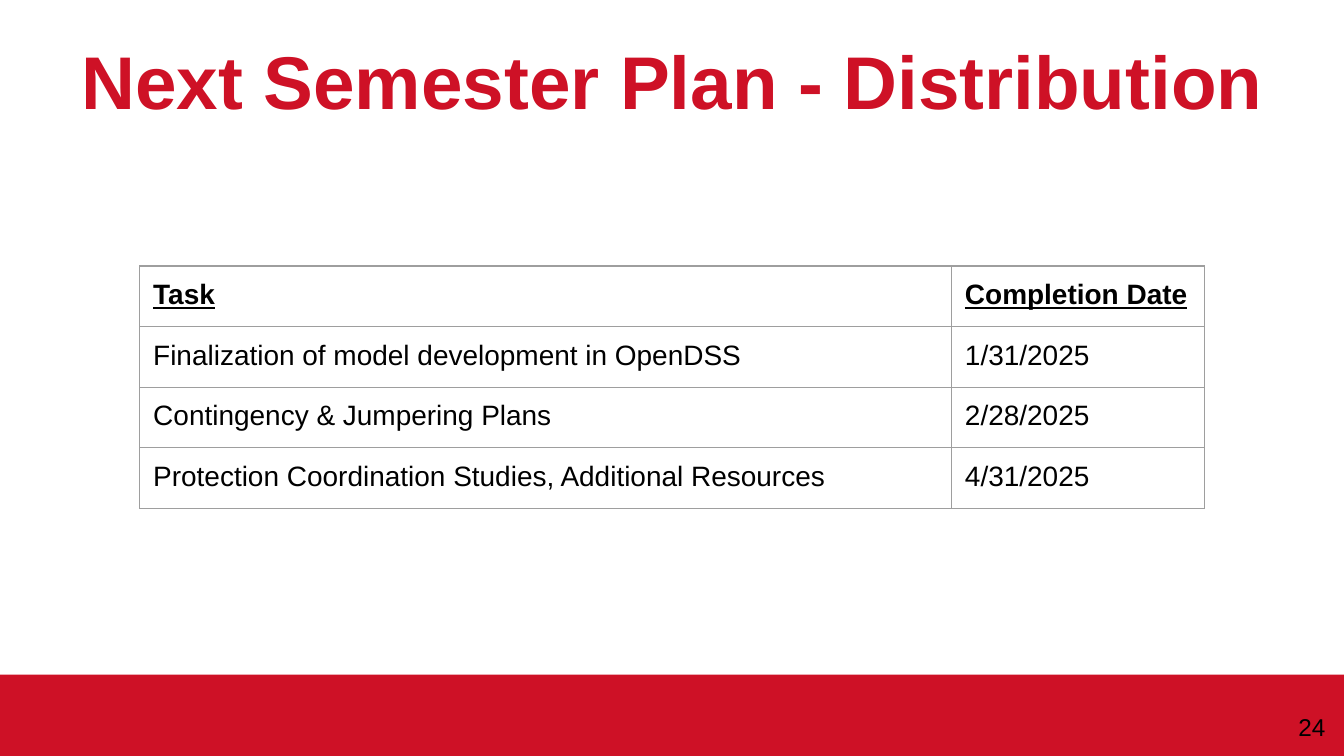
"""Build the Next Semester Plan slide with its task schedule table."""
from lxml import etree
from pptx import Presentation
from pptx.dml.color import RGBColor
from pptx.enum import shapes, text
from pptx.oxml import ns
from pptx.util import Inches, Pt

COLORS = {"red": "CE1126", "black": "000000", "grey": "9E9E9E"}
FORMATS = {
    "title": {"size": Pt(40), "bold": True},
    "header": {"size": Pt(15), "bold": True, "underline": True},
    "body": {"size": Pt(15), "bold": False},
    "number": {"size": Pt(13)},
}
SCHEDULE = [
    ("Task", "Completion Date"),
    ("Finalization of model development in OpenDSS", "1/31/2025"),
    ("Contingency & Jumpering Plans", "2/28/2025"),
    ("Protection Coordination Studies, Additional Resources", "4/31/2025"),
]
COLUMN_WIDTHS = [6.04, 1.88]
ROW_HEIGHT = 0.42


def write(frame, words, style, color, alignment):
    paragraph = frame.paragraphs[0]
    paragraph.alignment = alignment
    run = paragraph.add_run()
    run.text = words
    run.font.name = "Arial"
    run.font.color.rgb = RGBColor.from_string(COLORS[color])
    for name, value in FORMATS[style].items():
        setattr(run.font, name, value)


def add_borders(cell):
    properties = cell._tc.get_or_add_tcPr()
    for position, side in enumerate(("lnL", "lnR", "lnT", "lnB")):
        line = etree.Element(ns.qn(f"a:{side}"), w=str(Pt(0.75)))
        fill = etree.SubElement(line, ns.qn("a:solidFill"))
        etree.SubElement(fill, ns.qn("a:srgbClr"), val=COLORS["grey"])
        properties.insert(position, line)


presentation = Presentation()
presentation.slide_width = Inches(10)
presentation.slide_height = Inches(10) * 9 // 16
slide = presentation.slides.add_slide(presentation.slide_layouts[6])

footer = slide.shapes.add_shape(
    shapes.MSO_SHAPE.RECTANGLE, Inches(0), Inches(5.02), Inches(10), Inches(0.62))
footer.shadow.inherit = False
footer.fill.solid()
footer.fill.fore_color.rgb = RGBColor.from_string(COLORS["red"])
footer.line.fill.background()

LABELS = [
    ("Next Semester Plan - Distribution", (0.5, 0.12, 9, 0.94), "title", "red",
     text.PP_ALIGN.CENTER),
    ("24", (9.36, 5.19, 0.6, 0.43), "number", "black", text.PP_ALIGN.RIGHT),
]
for words, place, style, color, alignment in LABELS:
    box = slide.shapes.add_textbox(*map(Inches, place))
    box.text_frame.word_wrap = True
    box.text_frame.vertical_anchor = text.MSO_ANCHOR.MIDDLE
    write(box.text_frame, words, style, color, alignment)

table = slide.shapes.add_table(
    len(SCHEDULE), len(COLUMN_WIDTHS), Inches(1.04), Inches(1.98),
    Inches(sum(COLUMN_WIDTHS)), Inches(ROW_HEIGHT * len(SCHEDULE))).table
table.first_row = False
table.horz_banding = False
for column, width in zip(table.columns, COLUMN_WIDTHS):
    column.width = Inches(width)
for row_index, entries in enumerate(SCHEDULE):
    table.rows[row_index].height = Inches(ROW_HEIGHT)
    for column_index, words in enumerate(entries):
        cell = table.cell(row_index, column_index)
        cell.fill.background()
        for side in ("left", "right", "top", "bottom"):
            setattr(cell, f"margin_{side}", Inches(0.1))
        add_borders(cell)
        style = "body" if row_index else "header"
        write(cell.text_frame, words, style, "black", text.PP_ALIGN.LEFT)

presentation.save("out.pptx")
